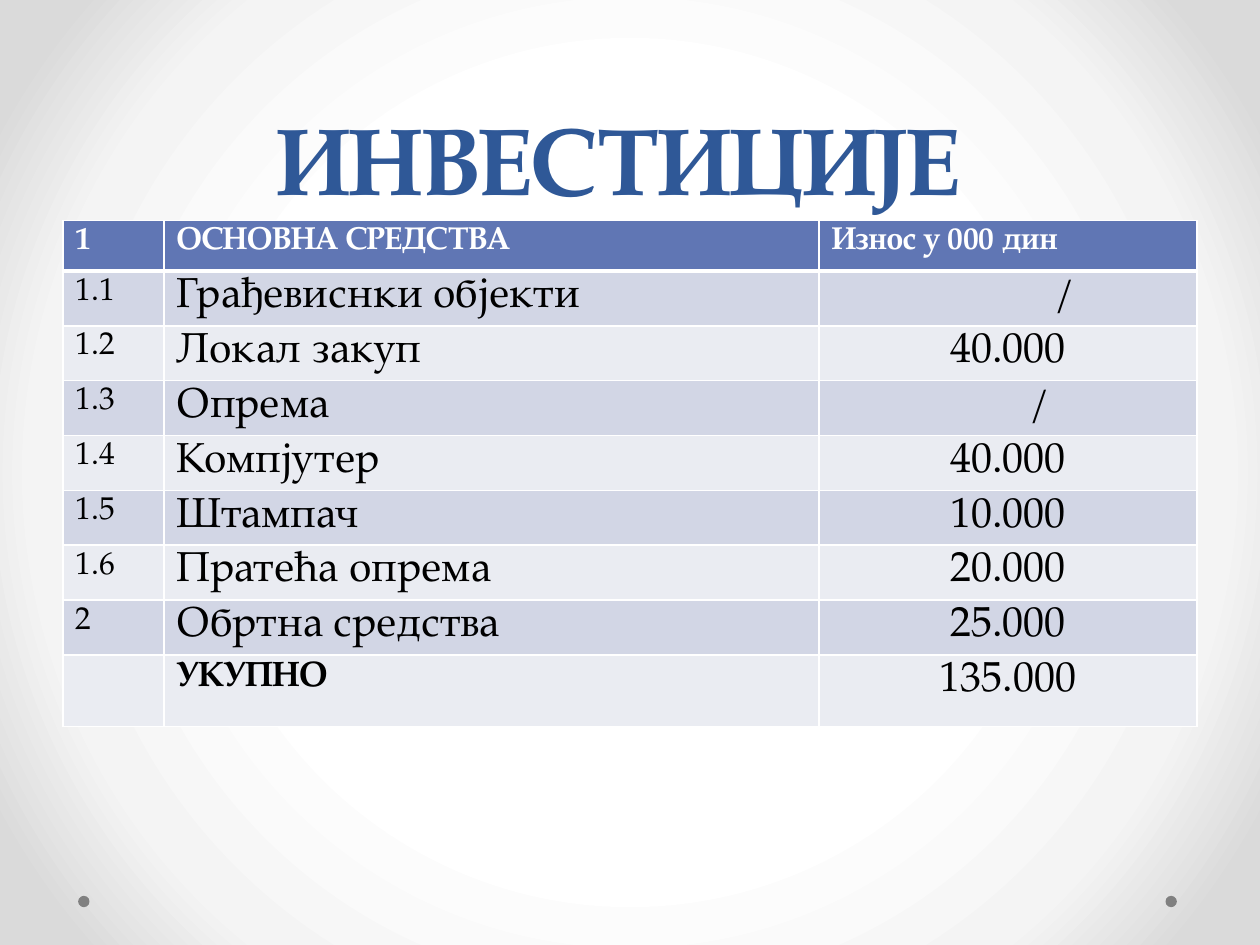
from lxml import etree
from pptx import Presentation
from pptx import util as u
from pptx.dml.color import RGBColor
from pptx.enum import shapes, text
from pptx.oxml import parse_xml
from pptx.oxml.ns import nsdecls, qn

FONT = "TeX Gyre Pagella"
COLORS = {
    "title": "2F5897", "header": "6076B4", "band_dark": "D2D6E5",
    "band_light": "EAECF2", "white": "FFFFFF", "black": "000000",
    "dot": "808080", "mist": "F4F4F4", "edge": "DADADA",
}
ROWS = [
    ("1", "ОСНОВНА СРЕДСТВА", "Износ у 000 дин"),
    ("1.1", "Грађевиснки објекти", "/"),
    ("1.2", "Локал закуп", "40.000"),
    ("1.3", "Опрема", "/"),
    ("1.4", "Компјутер", "40.000"),
    ("1.5", "Штампач", "10.000"),
    ("1.6", "Пратећа опрема", "20.000"),
    ("2", "Обртна средства", "25.000"),
    ("", "УКУПНО", "135.000"),
]
COLUMN_WIDTHS = (0.8, 5.2, 3)
HEADER_HEIGHT, ROW_HEIGHT, TOTAL_HEIGHT = 0.4, 0.43, 0.57
ROW_HEIGHTS = [HEADER_HEIGHT] + [ROW_HEIGHT] * (len(ROWS) - 2) + [TOTAL_HEIGHT]
SLASH_INDENTS = {1: 0.9, 3: 0.5}


def color(name):
    return RGBColor.from_string(COLORS[name])


def add_span(para, words, size, shade, bold=False):
    span = para.add_run()
    span.text = words
    span.font.name = FONT
    span.font.size = u.Pt(size)
    span.font.bold = bold
    span.font.color.rgb = color(shade)


def paint_background(page):
    page.background.fill.gradient()
    gradient = page.background._cSld.find(".//" + qn("a:gradFill"))
    stops = "".join(
        f'<a:gs pos="{position * 1000}"><a:srgbClr val="{COLORS[name]}"/></a:gs>'
        for position, name in ((50, "white"), (76, "mist"), (92, "edge"))
    )
    radial = parse_xml(
        f'<a:gradFill {nsdecls("a")} rotWithShape="1"><a:gsLst>{stops}</a:gsLst>'
        '<a:path path="circle"><a:fillToRect l="50000" t="50000" r="50000" b="50000"/>'
        "</a:path></a:gradFill>"
    )
    gradient.getparent().replace(gradient, radial)


def add_dots(page, lefts, top, size):
    for left in lefts:
        dot = page.shapes.add_shape(
            shapes.MSO_SHAPE.OVAL, u.Inches(left), u.Inches(top), u.Inches(size), u.Inches(size)
        )
        dot.shadow.inherit = False
        dot.fill.solid()
        dot.fill.fore_color.rgb = color("dot")
        dot.line.fill.background()


def place_title(page, left, top, width, height):
    title = page.shapes.title
    title.left, title.top = u.Inches(left), u.Inches(top)
    title.width, title.height = u.Inches(width), u.Inches(height)
    frame = title.text_frame
    frame.vertical_anchor = text.MSO_ANCHOR.BOTTOM
    frame.auto_size = text.MSO_AUTO_SIZE.NONE
    para = frame.paragraphs[0]
    para.alignment = text.PP_ALIGN.CENTER
    para.line_spacing = u.Pt(58)
    add_span(para, "ИНВЕСТИЦИЈЕ ", 54, "title", True)


def set_borders(cell, bottom, top):
    properties = cell._tc.get_or_add_tcPr()
    sides = (("lnL", 1), ("lnR", 1), ("lnT", top), ("lnB", bottom))
    for position, (side, width) in enumerate(sides):
        line = etree.Element(qn("a:" + side), w=str(u.Pt(width)))
        fill = etree.SubElement(line, qn("a:solidFill"))
        etree.SubElement(fill, qn("a:srgbClr"), val=COLORS["white"])
        properties.insert(position, line)


def fill_cell(cell, row, column, words):
    header, total = row == 0, row == len(ROWS) - 1
    cell.fill.solid()
    band = "band_dark" if row % 2 else "band_light"
    cell.fill.fore_color.rgb = color("header" if header else band)
    set_borders(cell, bottom=3 if header else 1, top=3 if row == 1 else 1)
    if not words:
        return
    para = cell.text_frame.paragraphs[0]
    if column == 2 and not header:
        para.alignment = text.PP_ALIGN.CENTER
        if row in SLASH_INDENTS:
            para._p.get_or_add_pPr().set("marL", str(u.Inches(SLASH_INDENTS[row])))
    total_label = total and column == 1
    size = 18 if header or column == 0 else 20 if total_label else 24
    add_span(para, words, size, "white" if header else "black", header or total_label)


def add_investment_table(page, left, top, width):
    table = page.shapes.add_table(
        len(ROWS), len(COLUMN_WIDTHS),
        u.Inches(left), u.Inches(top), u.Inches(width), u.Inches(sum(ROW_HEIGHTS)),
    ).table
    for column, column_width in zip(table.columns, COLUMN_WIDTHS):
        column.width = u.Inches(column_width)
    for row, (entries, height) in enumerate(zip(ROWS, ROW_HEIGHTS)):
        table.rows[row].height = u.Inches(height)
        for column, words in enumerate(entries):
            fill_cell(table.cell(row, column), row, column, words)


def main():
    deck = Presentation()
    deck.slide_width, deck.slide_height = u.Inches(10), u.Inches(7.5)
    page = deck.slides.add_slide(deck.slide_layouts[5])
    paint_background(page)
    add_dots(page, (0.62, 9.25), 7.11, 0.09)
    place_title(page, 0.5, 0, 9, 1.75)
    add_investment_table(page, 0.5, 1.75, 9)
    deck.save("out.pptx")


if __name__ == "__main__":
    main()
